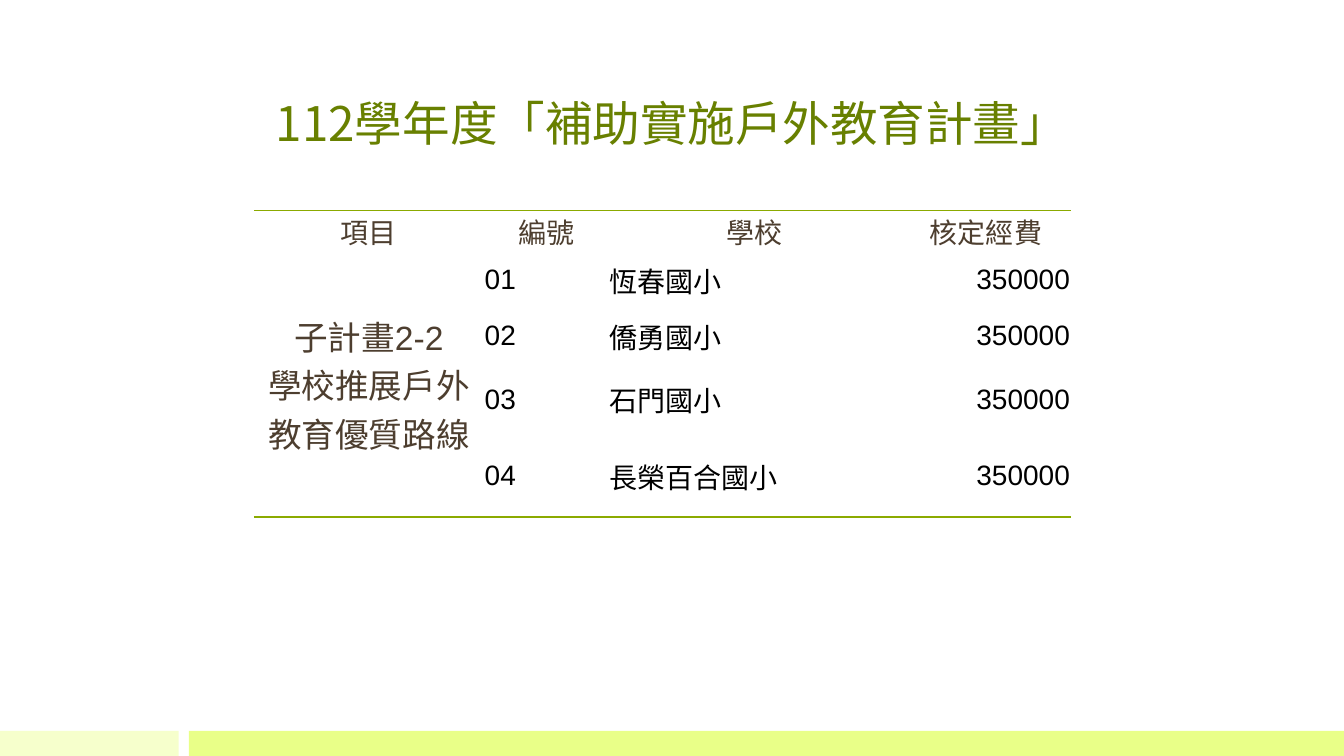
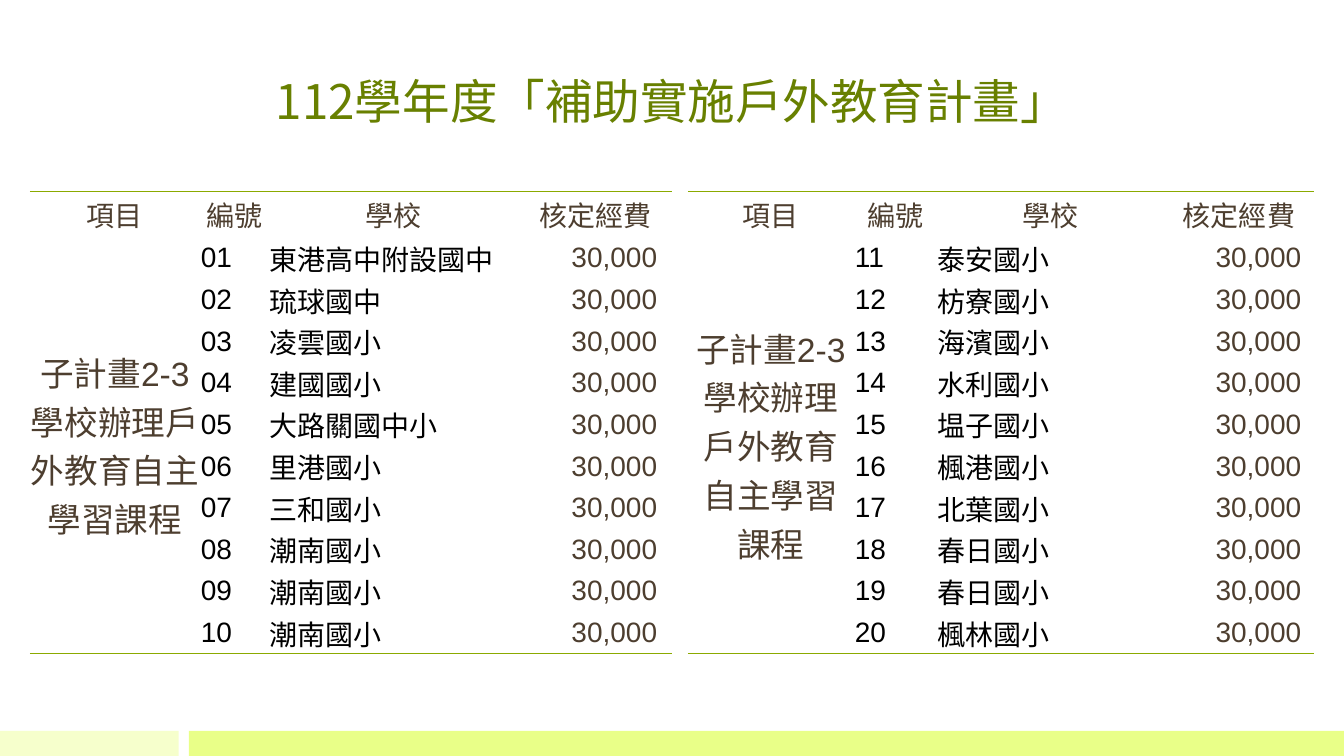
from lxml.etree import SubElement
from pptx import Presentation
from pptx.dml.color import RGBColor
from pptx.enum.shapes import MSO_SHAPE
from pptx.enum.text import MSO_ANCHOR, PP_ALIGN
from pptx.oxml import parse_xml
from pptx.oxml.ns import nsdecls, qn
from pptx.util import Pt

COLORS = {
    "title": "688000",
    "text": "4D3E2F",
    "entry": "000000",
    "rule": "8BAA00",
    "pale band": "F6FFCC",
    "bright band": "E9FF88",
}
TITLE = "112學年度「補助實施戶外教育計畫」"
TITLE_FONT = "Noto Sans CJK SC"
TABLE_FONT = "Arial"
HEADERS = ["項目", "編號", "學校", "核定經費"]
BANDS = [(0, 127.7, "pale band"), (135, 825, "bright band")]
PLAIN_TABLE_STYLE = "{2D5ABB26-0587-4C30-8999-92F81FD0307C}"

# Content: each slide has a title position and its tables
COURSE_LABEL = "子計畫2-3\v學校辦理戶外教育自主學習課程"
COURSE_ROWS = [32.4] + [27.4] * 10
SLIDES = [
    {"title_top": 49.7, "tables": [
        {"left": 181.4, "top": 150.5,
         "columns": [164.2, 89.2, 208.9, 121.3],
         "rows": [27.4, 40.1, 40.1, 50.4, 59.2],
         "label": "子計畫2-2\v學校推展戶外\v教育優質路線",
         "first": 1, "amount": "350000", "amount_color": "entry", "amount_inset": 0.7,
         "schools": ["恆春國小", "僑勇國小", "石門國小", "長榮百合國小"]},
    ]},
    {"title_top": 34.4, "tables": [
        {"left": 21.4, "top": 136.8,
         "columns": [121.4, 49, 178.8, 109.4],
         "rows": COURSE_ROWS, "label": COURSE_LABEL,
         "first": 1, "amount": "30,000", "amount_color": "text", "amount_inset": 10.5,
         "schools": ["東港高中附設國中", "琉球國中", "凌雲國小", "建國國小", "大路關國中小",
                     "里港國小", "三和國小", "潮南國小", "潮南國小", "潮南國小"]},
        {"left": 491.3, "top": 136.8,
         "columns": [118.6, 59, 162.7, 107],
         "rows": COURSE_ROWS, "label": COURSE_LABEL,
         "first": 11, "amount": "30,000", "amount_color": "text", "amount_inset": 9,
         "schools": ["泰安國小", "枋寮國小", "海濱國小", "水利國小", "塭子國小",
                     "楓港國小", "北葉國小", "春日國小", "春日國小", "楓林國小"]},
    ]},
]


def fill_cell(cell, text, color="text", size=20, align=PP_ALIGN.CENTER, inset=0, right=0):
    cell.text_frame.text = text
    cell.vertical_anchor = MSO_ANCHOR.MIDDLE
    cell.margin_left = cell.margin_top = Pt(inset)
    cell.margin_right, cell.margin_bottom = Pt(right), Pt(0)
    cell.fill.background()
    paragraph = cell.text_frame.paragraphs[0]
    paragraph.alignment = align
    paragraph.font.name = TABLE_FONT
    paragraph.font.size = Pt(size)
    paragraph.font.color.rgb = RGBColor.from_string(COLORS[color])


def add_rule(cell, side):
    line = parse_xml(
        f'<a:{side} {nsdecls("a")} w="12700"><a:solidFill>'
        f'<a:srgbClr val="{COLORS["rule"]}"/></a:solidFill></a:{side}>')
    cell._tc.get_or_add_tcPr().insert(0, line)


presentation = Presentation()
presentation.slide_width, presentation.slide_height = Pt(960), Pt(540)

for content in SLIDES:
    slide = presentation.slides.add_slide(presentation.slide_layouts[5])

    # Footer bands
    for left, width, color in BANDS:
        band = slide.shapes.add_shape(
            MSO_SHAPE.RECTANGLE, Pt(left), Pt(522), Pt(width), Pt(18))
        band.shadow.inherit = False
        band.fill.solid()
        band.fill.fore_color.rgb = RGBColor.from_string(COLORS[color])
        band.line.fill.background()

    # Title
    title = slide.shapes.title
    title.left, title.top = Pt(111), Pt(content["title_top"])
    title.width, title.height = Pt(738), Pt(61.6)
    title.text_frame.text = TITLE
    title.text_frame.vertical_anchor = MSO_ANCHOR.BOTTOM
    paragraph = title.text_frame.paragraphs[0]
    paragraph.alignment = PP_ALIGN.CENTER
    paragraph.font.name = TITLE_FONT
    paragraph.font.size = Pt(34)
    paragraph.font.color.rgb = RGBColor.from_string(COLORS["title"])
    default_font = paragraph._p.pPr.find(qn("a:defRPr"))
    SubElement(default_font, qn("a:ea"), typeface=TITLE_FONT)

    # Tables of schools and grants
    for grant in content["tables"]:
        columns, rows = grant["columns"], grant["rows"]
        frame = slide.shapes.add_table(
            len(rows), len(columns), Pt(grant["left"]), Pt(grant["top"]),
            Pt(sum(columns)), Pt(sum(rows)))
        table = frame.table
        table.first_row = table.horz_banding = False
        frame.element.find(".//" + qn("a:tableStyleId")).text = PLAIN_TABLE_STYLE
        for column, width in zip(table.columns, columns):
            column.width = Pt(width)
        for row, height in zip(table.rows, rows):
            row.height = Pt(height)

        for index, header in enumerate(HEADERS):
            fill_cell(table.cell(0, index), header)
        label_cell = table.cell(1, 0)
        label_cell.merge(table.cell(len(rows) - 1, 0))
        fill_cell(label_cell, grant["label"], size=24)
        for index, school in enumerate(grant["schools"], start=1):
            number = f"{grant['first'] + index - 1:02d}"
            for column, text in ((1, number), (2, school)):
                fill_cell(table.cell(index, column), text, "entry",
                          align=PP_ALIGN.LEFT, inset=0.7, right=0.7)
            fill_cell(table.cell(index, 3), grant["amount"], grant["amount_color"],
                      align=PP_ALIGN.RIGHT, inset=0.7, right=grant["amount_inset"])

        # Rules above the header and below the last row
        for index in range(len(columns)):
            add_rule(table.cell(0, index), "lnT")
            add_rule(table.cell(len(rows) - 1, index), "lnB")
        add_rule(label_cell, "lnB")

presentation.save("out.pptx")
